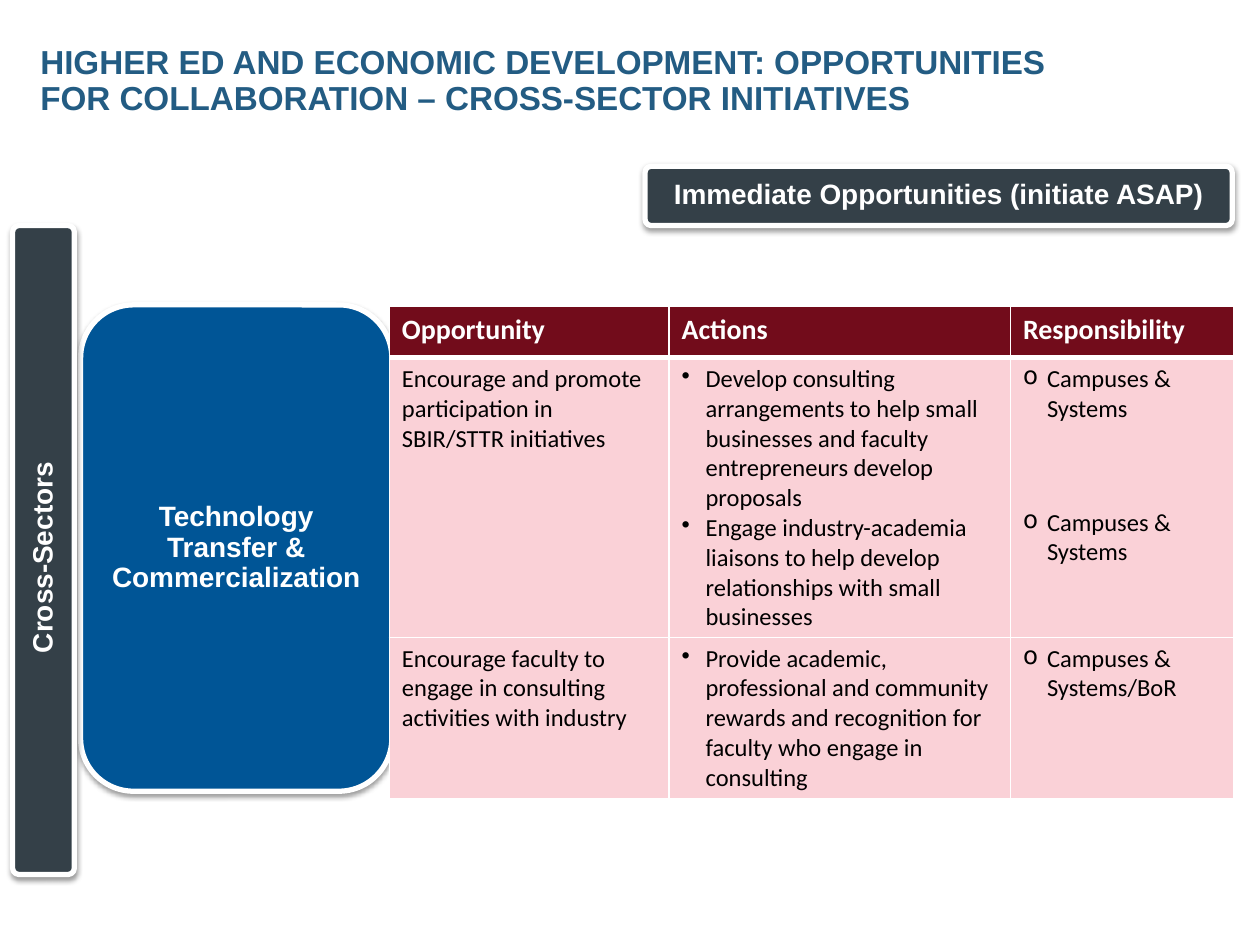
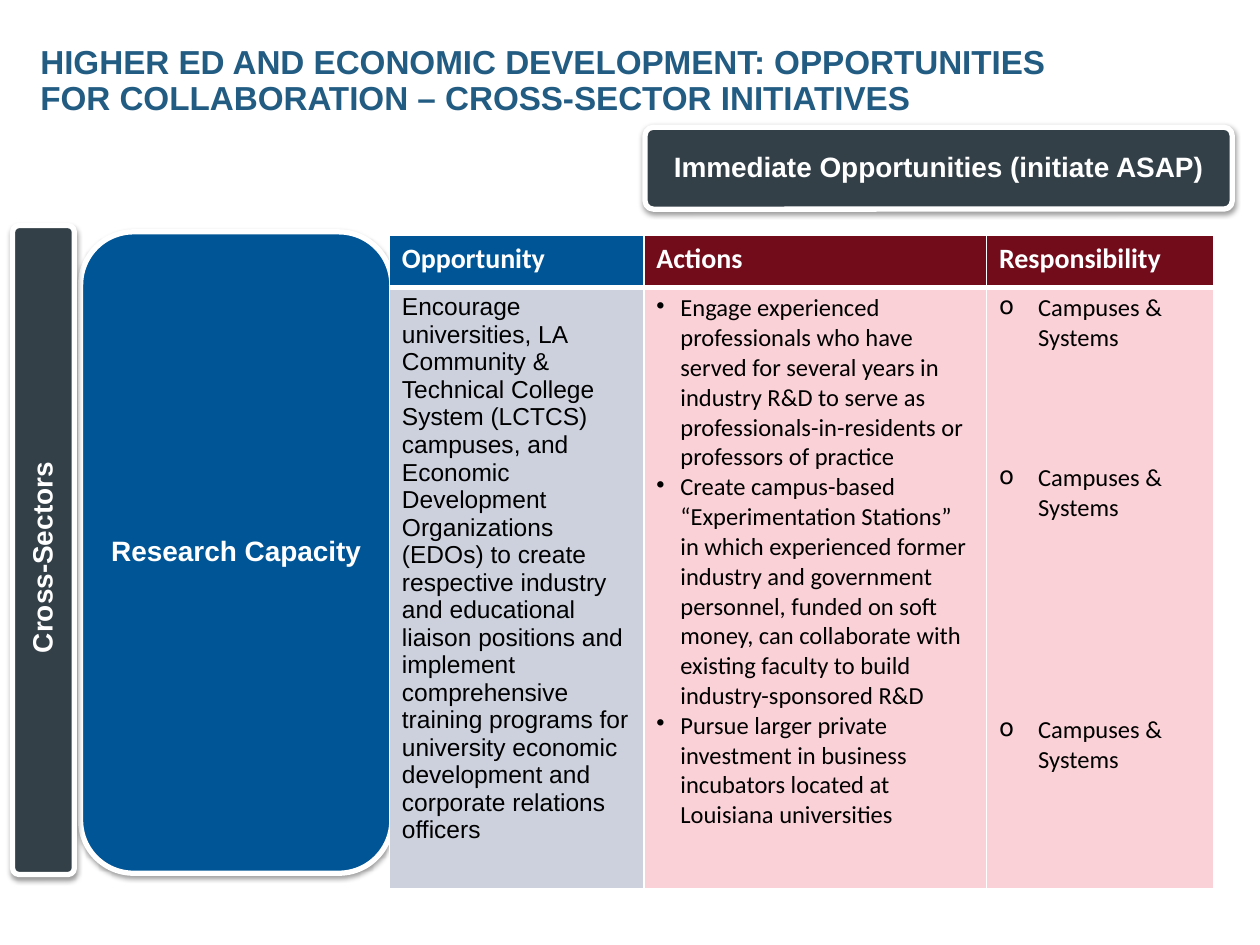
import pptx
import pptx.util
import pptx.dml.color
import pptx.enum.shapes
import pptx.enum.text
import pptx.oxml
import pptx.oxml.ns

Inches = pptx.util.Inches
Pt = pptx.util.Pt
ALIGN = pptx.enum.text.PP_ALIGN
MIDDLE = pptx.enum.text.MSO_ANCHOR.MIDDLE

WHITE, BLACK, TITLE = "FFFFFF", "000000", "235C83"
SLATE, BLUE, MAROON = "344048", "005596", "720C1B"
PINK, PALE_BLUE = "FAD1D7", "CCD1DD"

TITLE_TEXT = ("HIGHER ED AND ECONOMIC DEVELOPMENT: OPPORTUNITIES "
              "FOR COLLABORATION – CROSS-SECTOR INITIATIVES")
BANNER_TEXT = "Immediate Opportunities (initiate ASAP)"
SIDE_TEXT = "Cross-Sectors"
HEADERS = ["Opportunity", "Actions", "Responsibility"]
CAMPUSES = "Campuses & Systems"

TITLE_FONT = {"name": "Arial", "size": Pt(19), "bold": True}
LABEL_FONT = {"name": "Arial", "size": Pt(16), "bold": True}
HEADER_FONT = {"name": "Calibri", "size": Pt(16), "bold": True}
BODY_FONT = {"name": "Calibri", "size": Pt(14), "bold": False}

SLIDES = [
    {
        "banner": (5.12, 1.32, 4.66, 0.47),
        "topic": "Technology Transfer & Commercialization",
        "topic_box": (0.64, 2.42, 2.47, 3.86),
        "top": 2.43,
        "cols": [2.22, 2.71, 1.77],
        "heights": [0.41, 2.22, 1.28],
        "first_col": (MAROON, PINK, "Calibri"),
        "owner_indent": 0.19,
        "rows": [
            ("Encourage and promote participation in SBIR/STTR initiatives",
             ["Develop consulting arrangements to help small businesses and "
              "faculty entrepreneurs develop proposals",
              "Engage industry-academia liaisons to help develop "
              "relationships with small businesses"],
             [(CAMPUSES, 0), (CAMPUSES, 48)]),
            ("Encourage faculty to engage in consulting activities with industry",
             ["Provide academic, professional and community rewards and "
              "recognition for faculty who engage in consulting"],
             [("Campuses & Systems/BoR", 0)]),
        ],
    },
    {
        "banner": (5.12, 1.01, 4.66, 0.65),
        "topic": "Research Capacity",
        "topic_box": (0.64, 1.84, 2.47, 5.09),
        "top": 1.87,
        "cols": [2.02, 2.72, 1.8],
        "heights": [0.41, 4.46],
        "first_col": (BLUE, PALE_BLUE, "Arial"),
        "owner_indent": 0.31,
        "rows": [
            ("Encourage universities, LA Community & Technical College System "
             "(LCTCS) campuses, and Economic Development Organizations (EDOs) "
             "to create respective industry and educational liaison positions "
             "and implement comprehensive training programs for university "
             "economic development and corporate relations officers",
             ["Engage experienced professionals who have served for several "
              "years in industry R&D to serve as professionals-in-residents or "
              "professors of practice",
              "Create campus-based “Experimentation Stations” in which "
              "experienced former industry and government personnel, funded on "
              "soft money, can collaborate with existing faculty to build "
              "industry-sponsored R&D",
              "Pursue larger private investment in business incubators located "
              "at Louisiana universities"],
             [(CAMPUSES, 0), (CAMPUSES, 63), (CAMPUSES, 110)]),
        ],
    },
]


def rgb(value):
    return pptx.dml.color.RGBColor.from_string(value)


def xml(text):
    return pptx.oxml.parse_xml(text.replace(" ", f" {pptx.oxml.ns.nsdecls('a')} ", 1))


def write(p, text, font, color):
    r = p.add_run()
    r.text = text
    for key, value in font.items():
        setattr(r.font, key, value)
    r.font.color.rgb = rgb(color)


def set_frame(tf, left, top, right, bottom):
    values = {"margin_left": Inches(left), "margin_top": Inches(top),
              "margin_right": Inches(right), "margin_bottom": Inches(bottom),
              "word_wrap": True, "vertical_anchor": MIDDLE}
    for key, value in values.items():
        setattr(tf, key, value)


def add_title(s):
    sp = s.shapes.add_textbox(*map(Inches, (0.32, 0.36, 8.52, 0.58)))
    set_frame(sp.text_frame, 0, 0, 0, 0)
    p = sp.text_frame.paragraphs[0]
    p.line_spacing = 0.9
    write(p, TITLE_TEXT, TITLE_FONT, TITLE)


def add_panel(s, box, text, fill, corner, vertical=False):
    sp = s.shapes.add_shape(pptx.enum.shapes.MSO_SHAPE.ROUNDED_RECTANGLE, *map(Inches, box))
    sp.adjustments[0] = corner
    sp.fill.solid()
    sp.fill.fore_color.rgb = rgb(fill)
    sp.line.color.rgb = rgb(WHITE)
    sp.line.width = Pt(3)
    sp.shadow.inherit = False
    effects = sp._element.spPr.find(pptx.oxml.ns.qn("a:effectLst"))
    effects.append(xml(
        f'<a:outerShdw blurRad="{Pt(3.1)}" dist="{Pt(1.6)}" dir="5400000" rotWithShape="0">'
        f'<a:srgbClr val="{BLACK}"><a:alpha val="38000"/></a:srgbClr></a:outerShdw>'))
    tf = sp.text_frame
    set_frame(tf, 0.07, 0.15 if vertical else 0.03, 0.07, 0.03)
    if vertical:
        tf._txBody.bodyPr.set("vert", "vert270")
    p = tf.paragraphs[0]
    p.alignment = ALIGN.CENTER
    p.line_spacing = 0.9
    write(p, text, LABEL_FONT, WHITE)


def style_cell(cell, fill, top, bottom):
    tcPr = cell._tc.get_or_add_tcPr()
    for side, width in (("L", 1), ("R", 1), ("T", top), ("B", bottom)):
        tcPr.append(xml(f'<a:ln{side} w="{Pt(width)}"><a:solidFill>'
                        f'<a:srgbClr val="{WHITE}"/></a:solidFill></a:ln{side}>'))
    cell.fill.solid()
    cell.fill.fore_color.rgb = rgb(fill)


def write_bullets(cell, items, char, indent):
    tf = cell.text_frame
    for i, (text, gap) in enumerate(items):
        p = tf.add_paragraph() if i else tf.paragraphs[0]
        pPr = p._p.get_or_add_pPr()
        pPr.set("marL", str(Inches(indent)))
        pPr.set("indent", str(-Inches(indent)))
        pPr.append(xml(f'<a:buChar char="{char}"/>'))
        if gap:
            p.space_before = Pt(gap)
        write(p, text, BODY_FONT, BLACK)


def add_plan(s, data):
    cols, heights = data["cols"], data["heights"]
    box = (3.09, data["top"], sum(cols), sum(heights))
    table = s.shapes.add_table(len(heights), len(cols), *map(Inches, box)).table
    for col, width in zip(table.columns, cols):
        col.width = Inches(width)
    for row, height in zip(table.rows, heights):
        row.height = Inches(height)
    head_fill, body_fill, body_name = data["first_col"]
    for c, text in enumerate(HEADERS):
        cell = table.cell(0, c)
        style_cell(cell, MAROON if c else head_fill, 1, 3)
        write(cell.text_frame.paragraphs[0], text, HEADER_FONT, WHITE)
    for r, (opportunity, actions, owners) in enumerate(data["rows"], 1):
        cells = [table.cell(r, c) for c in range(len(cols))]
        for c, cell in enumerate(cells):
            style_cell(cell, PINK if c else body_fill, 3 if r == 1 else 1, 1)
        write(cells[0].text_frame.paragraphs[0], opportunity,
              {**BODY_FONT, "name": body_name}, BLACK)
        write_bullets(cells[1], [(text, 0) for text in actions], "•", 0.19)
        write_bullets(cells[2], owners, "o", data["owner_indent"])


def main():
    prs = pptx.Presentation()
    prs.slide_width, prs.slide_height = Inches(10), Inches(7.5)
    for data in SLIDES:
        s = prs.slides.add_slide(prs.slide_layouts[6])
        add_title(s)
        add_panel(s, data["banner"], BANNER_TEXT, SLATE, 0.1)
        add_panel(s, data["topic_box"], data["topic"], BLUE, 0.17)
        add_panel(s, (0.1, 1.79, 0.49, 5.15), SIDE_TEXT, SLATE, 0.1, vertical=True)
        add_plan(s, data)
    prs.save("out.pptx")


if __name__ == "__main__":
    main()
